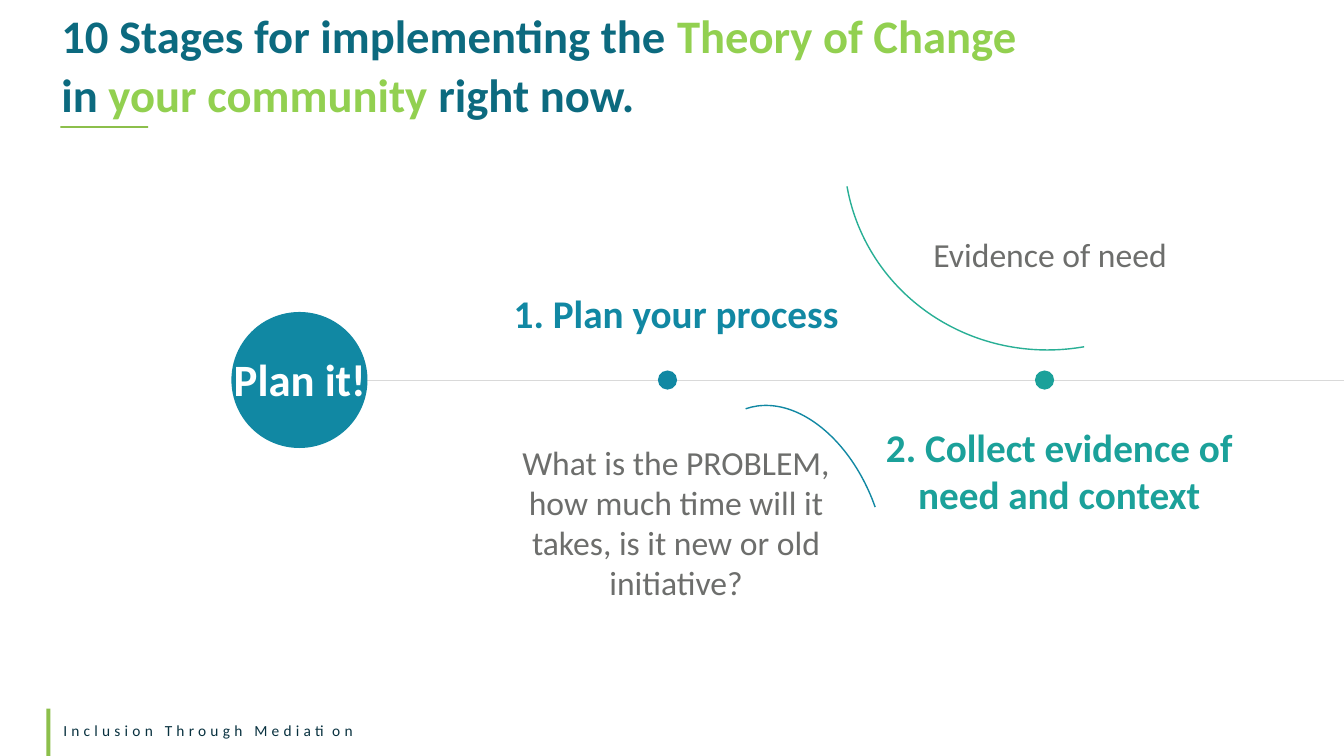
import pptx
import pptx.util
import pptx.dml.color
import pptx.enum.shapes
import pptx.enum.text

Inches = pptx.util.Inches
Pt = pptx.util.Pt
RGBColor = pptx.dml.color.RGBColor
SHAPE = pptx.enum.shapes.MSO_SHAPE
ALIGN = pptx.enum.text.PP_ALIGN
ANCHOR = pptx.enum.text.MSO_ANCHOR

BLUE = RGBColor(0x11, 0x88, 0xA3)
TEAL = RGBColor(0x1B, 0xA1, 0x9A)
MINT = RGBColor(0x28, 0xAF, 0x95)
GREEN = RGBColor(0x8C, 0xBF, 0x4B)
LIME = RGBColor(0x92, 0xD0, 0x50)
DEEP = RGBColor(0x0C, 0x6A, 0x7F)
NAVY = RGBColor(0x08, 0x31, 0x3F)
GRAY = RGBColor(0x6D, 0x6E, 0x6C)
PALE = RGBColor(0xD9, 0xD9, 0xD9)
WHITE = RGBColor(0xFF, 0xFF, 0xFF)

WIDTH, HEIGHT = 13.33, 7.5
AXIS = 3.77

DISCS = [(2.97, 1.35, BLUE), (6.62, 0.19, BLUE), (10.36, 0.19, TEAL)]
BARS = [(0.6, 1.25, 0.87, 0.02), (0.46, 7.03, 0.04, 0.47)]
ARCS = [
    ((8.37, -0.48, 4.08, 3.95), 170, MINT),
    ((6.95, 3.98, 1.78, 2.69), 340.7, BLUE),
]

TITLE = [
    [("10 Stages for implementing the ", DEEP), ("Theory of Change", LIME)],
    [("in ", DEEP), ("your community ", LIME), ("right now.", DEEP)],
]
PLAN = [[("Plan it!", WHITE)]]
FOOT = [[("Inclusion Through Mediation", NAVY)]]
LABELS = [
    ((5.01, 4.33, 3.39, 1.72), 24, False, GRAY,
     "What is the PROBLEM, how much time will it takes, is it new or old initiative?"),
    ((4.73, 2.82, 3.95, 0.57), 28, True, BLUE, "1. Plan your process"),
    ((8.64, 4.15, 3.73, 1.04), 28, True, TEAL,
     "2. Collect evidence of need and context"),
    ((8.81, 2.27, 3.21, 0.5), 24, False, GRAY, "Evidence of need"),
]

deck = pptx.Presentation()
deck.slide_width, deck.slide_height = Inches(WIDTH), Inches(HEIGHT)
slide = deck.slides.add_slide(deck.slide_layouts[6])


def add_solid(kind, box, color):
    shape = slide.shapes.add_shape(kind, *map(Inches, box))
    shape.shadow.inherit = False
    shape.fill.solid()
    shape.fill.fore_color.rgb = color
    shape.line.fill.background()


def add_arc(box, turn, color):
    arc = slide.shapes.add_shape(SHAPE.ARC, *map(Inches, box))
    arc.shadow.inherit = False
    arc.rotation = turn
    arc.fill.background()
    arc.line.color.rgb = color
    arc.line.width = Pt(1)


def add_text(box, lines, size, bold=False, align=ALIGN.CENTER,
             anchor=ANCHOR.TOP, pitch=1.0, gap=0, track=0):
    frame = slide.shapes.add_textbox(*map(Inches, box)).text_frame
    frame.word_wrap = True
    frame.vertical_anchor = anchor
    for i, line in enumerate(lines):
        para = frame.add_paragraph() if i else frame.paragraphs[0]
        look = {"alignment": align, "line_spacing": pitch,
                "space_before": Pt(gap if i else 0)}
        for key, value in look.items():
            setattr(para, key, value)
        for words, color in line:
            run = para.add_run()
            run.text = words
            style = {"name": "Calibri", "size": Pt(size), "bold": bold}
            for key, value in style.items():
                setattr(run.font, key, value)
            run.font.color.rgb = color
            if track:
                run.font._element.set("spc", str(track * 100))


axis = slide.shapes.add_connector(
    pptx.enum.shapes.MSO_CONNECTOR.STRAIGHT,
    Inches(DISCS[0][0]), Inches(AXIS), Inches(WIDTH), Inches(AXIS))
axis.line.color.rgb = PALE
axis.line.width = Pt(0.5)
pptx.oxml.xmlchemy.OxmlElement
axis._element.spPr.append(pptx.oxml.parse_xml(
    '<a:effectLst xmlns:a="http://schemas.openxmlformats.org/drawingml/2006/main"/>'))

for mid, size, color in DISCS:
    add_solid(SHAPE.OVAL, (mid - size / 2, AXIS - size / 2, size, size), color)
for box in BARS:
    add_solid(SHAPE.RECTANGLE, box, GREEN)

add_text((0.53, 7.1, 12, 0.29), FOOT, 11, align=ALIGN.LEFT, track=3)
add_text((0.51, 0.13, 10.49, 1.17), TITLE, 33.3, True, ALIGN.LEFT,
         pitch=0.8, gap=10)
add_text((2.16, 3.39, 1.63, 0.8), PLAN, 32, True,
         anchor=ANCHOR.MIDDLE, pitch=0.9)
for box, turn, color in ARCS:
    add_arc(box, turn, color)
for box, size, bold, color, words in LABELS:
    add_text(box, [[(words, color)]], size, bold)

deck.save("out.pptx")
